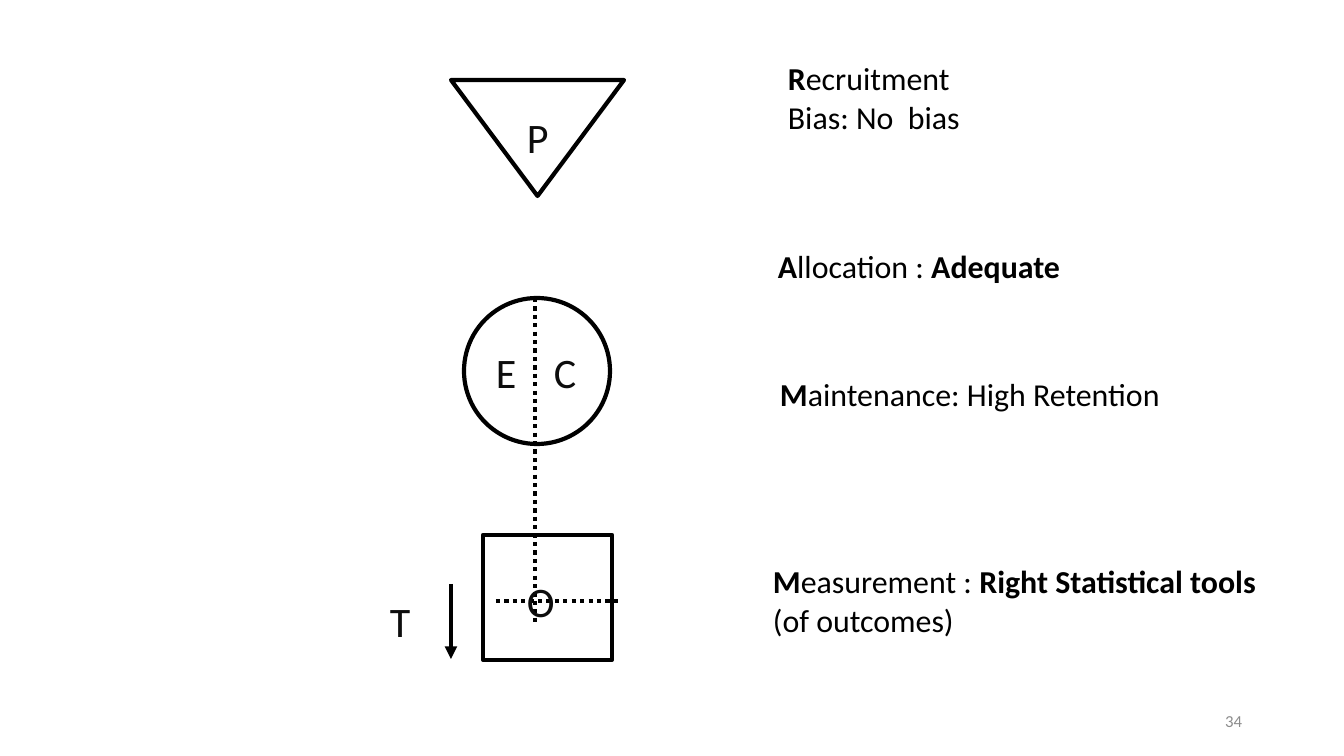
from dataclasses import dataclass

from lxml.etree import SubElement
from pptx import Presentation
from pptx.dml.color import RGBColor as Color
from pptx.enum.dml import MSO_LINE as Dash
from pptx.enum.shapes import MSO_CONNECTOR as Connector, MSO_SHAPE as Preset
from pptx.enum.text import MSO_ANCHOR as Anchor, PP_ALIGN as Align
from pptx.oxml.ns import qn
from pptx.util import Pt

EMU_PER_PX = 914400 / 100.8


@dataclass(frozen=True)
class Theme:
    font: str = "Calibri"
    ink: Color = Color(0, 0, 0)
    label: Color = Color(13, 13, 13)
    muted: Color = Color(140, 140, 140)
    stroke: float = 3
    label_size: float = 30
    note_size: float = 22.8
    number_size: float = 12


THEME = Theme()


def px(*lengths):
    return [round(length * EMU_PER_PX) for length in lengths]


def apply_format(target, values):
    for name, value in values.items():
        setattr(target, name, value)


def style_line(line, dash=None):
    line.color.rgb = THEME.ink
    apply_format(line, {"width": Pt(THEME.stroke), "dash_style": dash})


def add_outline(slide, preset, left, top, width, height, rotation=0):
    shape = slide.shapes.add_shape(preset, *px(left, top, width, height))
    shape.shadow.inherit = False
    shape.rotation = rotation
    shape.fill.background()
    style_line(shape.line)


def add_stroke(slide, start, end, dash=None, arrow=False):
    connector = slide.shapes.add_connector(Connector.STRAIGHT, *px(*start, *end))
    style_line(connector.line, dash)
    if arrow:
        SubElement(connector.line._get_or_add_ln(), qn("a:tailEnd"), type="triangle")
    SubElement(connector._element.spPr, qn("a:effectLst"))


def add_text(slide, box, paragraphs, size, color, wrap=True,
             align=Align.LEFT, anchor=Anchor.TOP):
    frame = slide.shapes.add_textbox(*px(*box)).text_frame
    apply_format(frame, {"word_wrap": wrap, "vertical_anchor": anchor})
    for index, runs in enumerate(paragraphs):
        paragraph = frame.add_paragraph() if index else frame.paragraphs[0]
        paragraph.alignment = align
        for text, bold in runs:
            run = paragraph.add_run()
            run.text = text
            apply_format(run.font, {"name": THEME.font, "size": Pt(size), "bold": bold})
            run.font.color.rgb = color


def add_study_diagram(slide, left, top):
    axis = left + 155
    add_outline(slide, Preset.OVAL, left + 84, top + 218, 146, 146)
    add_outline(slide, Preset.RECTANGLE, left + 103, top + 455, 129, 125)
    add_outline(slide, Preset.ISOSCELES_TRIANGLE, left + 71, top, 173, 116, 180)
    add_stroke(slide, (axis, top + 218), (axis, top + 544), Dash.ROUND_DOT)
    add_stroke(slide, (left + 116, top + 521), (left + 241, top + 521), Dash.ROUND_DOT)
    add_stroke(slide, (left + 71, top + 504), (left + 71, top + 579), arrow=True)
    labels = [("P", 137, 27), ("E", 106, 262), ("C", 164, 262),
              ("O", 137, 491), ("T", 0, 511)]
    for letter, x, y in labels:
        add_text(slide, (left + x, top + y, 42, 60), [[(letter, False)]],
                 THEME.label_size, THEME.label, wrap=False)


def add_bias_notes(slide, left, top):
    notes = [
        (15, 0, 348, 87, [[("R", True), ("ecruitment", False)],
                          [("Bias: No  bias", False)]]),
        (5, 188, 367, 48, [[("A", True), ("llocation : ", False), ("Adequate", True)]]),
        (7, 316, 403, 48, [[("M", True), ("aintenance: High Retention", False)]]),
        (0, 503, 505, 87, [[("M", True), ("easurement : ", False),
                            ("Right Statistical tools ", True),
                            ("(of outcomes)", False)]]),
    ]
    for x, y, width, height, paragraphs in notes:
        add_text(slide, (left + x, top + y, width, height), paragraphs,
                 THEME.note_size, THEME.ink)


def add_slide_number(slide, left, top):
    add_text(slide, (left, top, 302, 40), [[("34", False)]], THEME.number_size,
             THEME.muted, align=Align.RIGHT, anchor=Anchor.MIDDLE)


def main():
    presentation = Presentation()
    width, height = px(1344, 756)
    apply_format(presentation, {"slide_width": width, "slide_height": height})
    slide = presentation.slides.add_slide(presentation.slide_layouts.get_by_name("Blank"))
    add_study_diagram(slide, 380, 80)
    add_bias_notes(slide, 763, 54)
    add_slide_number(slide, 950, 701)
    presentation.save("out.pptx")


if __name__ == "__main__":
    main()
